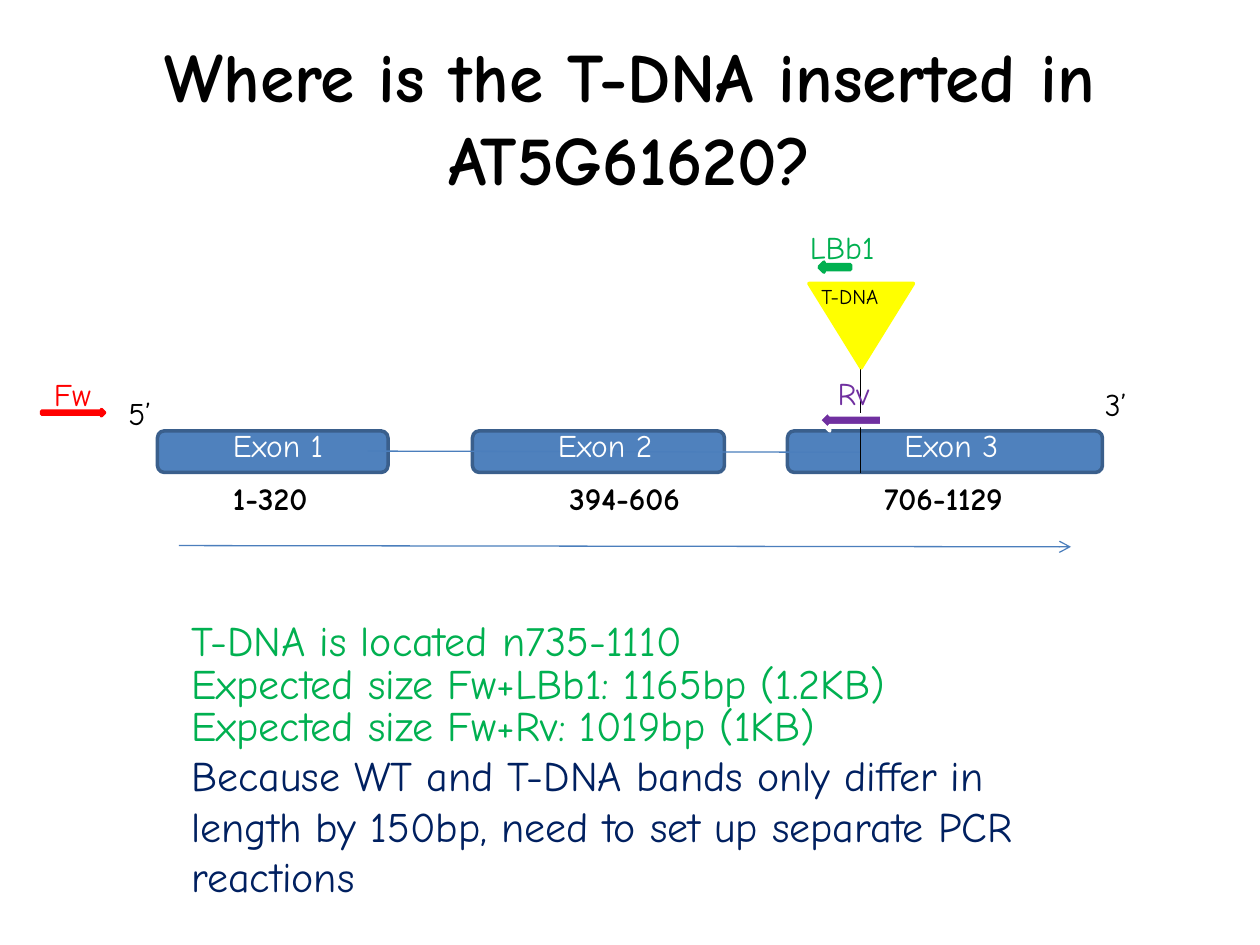
from pptx import Presentation
from pptx.dml.color import RGBColor
from pptx.enum.shapes import MSO_CONNECTOR, MSO_SHAPE as SHAPE
from pptx.enum.text import MSO_ANCHOR as ANCHOR, PP_ALIGN as ALIGN
from pptx.oxml.ns import qn
from pptx.util import Inches, Pt
from lxml.etree import SubElement

THEME = {
    "font": "Comic Neue",
    "size": {"title": 39.6, "body": 24, "label": 18, "small": 12},
    "color": {
        "black": "000000", "white": "FFFFFF", "blue": "4F81BD",
        "edge": "3A5F8C", "line": "4B7EBC", "green": "00B050",
        "yellow": "FFFF00", "red": "FF0000", "purple": "7030A0",
        "navy": "002060",
    },
}

TITLE = "Where is the T-DNA inserted in AT5G61620?"

# name, box left, box width, name left, range, range left
EXONS = [
    ("Exon 1", 1.25, 1.83, 1.75, "1-320", 1.75),
    ("Exon 2", 3.75, 2, 4.33, "394-606", 4.42),
    ("Exon 3", 6.25, 2.5, 7.08, "706-1129", 6.92),
]
EXON_TOP, EXON_HEIGHT, NAME_TOP, RANGE_TOP = 3.42, 0.33, 3.33, 3.75
LABEL_WIDTH, LABEL_HEIGHT = 1.92, 0.4

# start, end, colour, arrowhead
LINES = [
    ((2.92, 3.58), (6.83, 3.59), "line", False),
    ((1.42, 4.33), (8.5, 4.34), "line", True),
    ((6.83, 3.75), (6.83, 2.75), "black", False),
]

# shape, (left, top, width, height), fill, outline
MARKERS = [
    (SHAPE.FLOWCHART_MERGE, (6.42, 2.25, 0.83, 0.67), "yellow", "yellow"),
    (SHAPE.LEFT_ARROW, (6.5, 2.08, 0.25, 0.08), "green", "green"),
    (SHAPE.RIGHT_ARROW, (0.33, 3.25, 0.5, 0.05), "blue", "red"),
    (SHAPE.LEFT_ARROW, (6.5, 3.25, 0.5, 0.17), "purple", "white"),
]

# text, (left, top, width, height), size, colour
LABELS = [
    ("5’", (0.92, 3.08, 0.42, 0.4), "label", "black"),
    ("3’", (8.67, 3.01, 0.75, 0.4), "label", "black"),
    ("LBb1", (6.33, 1.76, 0.92, 0.4), "label", "green"),
    ("T-DNA", (6.42, 2.2, 0.76, 0.3), "small", "black"),
    ("Fw", (0.33, 2.93, 0.5, 0.4), "label", "red"),
    ("Rv", (6.55, 2.92, 0.45, 0.4), "label", "purple"),
]

# (left, top, width, height), paragraphs with their colours
NOTES = [
    ((1.42, 4.83, 6.25, 0.5), [("T-DNA is located n735-1110", "green")]),
    ((1.42, 5.17, 6.92, 0.5),
     [("Expected size Fw+LBb1: 1165bp (1.2KB)", "green")]),
    ((1.42, 5.5, 7.42, 1.72), [
        ("Expected size Fw+Rv: 1019bp (1KB)", "green"),
        ("Because WT and T-DNA bands only differ in length by 150bp, "
         "need to set up separate PCR reactions", "navy"),
    ]),
]


def rgb(name):
    return RGBColor.from_string(THEME["color"][name])


def add_text(slide, box, paragraphs, size, bold=False,
             align=ALIGN.LEFT, anchor=ANCHOR.TOP):
    """Add a text box; paragraphs is a list of (text, colour name)."""
    tf = slide.shapes.add_textbox(*map(Inches, box)).text_frame
    tf.word_wrap = True
    tf.vertical_anchor = anchor
    font = {"name": THEME["font"], "size": Pt(THEME["size"][size]),
            "bold": bold}
    for i, (text, color) in enumerate(paragraphs):
        p = tf.add_paragraph() if i else tf.paragraphs[0]
        p.alignment = align
        r = p.add_run()
        r.text = text
        for key, value in font.items():
            setattr(r.font, key, value)
        r.font.color.rgb = rgb(color)


def add_shape(slide, kind, box, fill, outline):
    sp = slide.shapes.add_shape(kind, *map(Inches, box))
    sp.shadow.inherit = False
    sp.fill.solid()
    sp.fill.fore_color.rgb = rgb(fill)
    sp.line.color.rgb = rgb(outline)
    sp.line.width = Pt(2)


def add_line(slide, start, end, color, arrow):
    cx = slide.shapes.add_connector(
        MSO_CONNECTOR.STRAIGHT, *map(Inches, start + end))
    cx.line.color.rgb = rgb(color)
    cx.line.width = Pt(0.75)
    if arrow:
        SubElement(cx.line._get_or_add_ln(), qn("a:tailEnd"), type="arrow")
    SubElement(cx._element.spPr, qn("a:effectLst"))


def main():
    prs = Presentation()
    prs.slide_width, prs.slide_height = Inches(10), Inches(7.5)
    slide = prs.slides.add_slide(prs.slide_layouts[6])

    add_text(slide, (0.5, 0.3, 9, 1.25), [(TITLE, "black")], "title",
             bold=True, align=ALIGN.CENTER, anchor=ANCHOR.MIDDLE)
    for _, left, width, *_ in EXONS:
        add_shape(slide, SHAPE.ROUNDED_RECTANGLE,
                  (left, EXON_TOP, width, EXON_HEIGHT), "blue", "edge")
    for line in LINES:
        add_line(slide, *line)
    for marker in MARKERS:
        add_shape(slide, *marker)
    for name, _, _, name_left, span, span_left in EXONS:
        add_text(slide, (name_left, NAME_TOP, LABEL_WIDTH, LABEL_HEIGHT),
                 [(name, "white")], "label")
        add_text(slide, (span_left, RANGE_TOP, LABEL_WIDTH, LABEL_HEIGHT),
                 [(span, "black")], "label", bold=True)
    for text, box, size, color in LABELS:
        add_text(slide, box, [(text, color)], size)
    for box, paragraphs in NOTES:
        add_text(slide, box, paragraphs, "body")

    prs.save("out.pptx")


if __name__ == "__main__":
    main()
